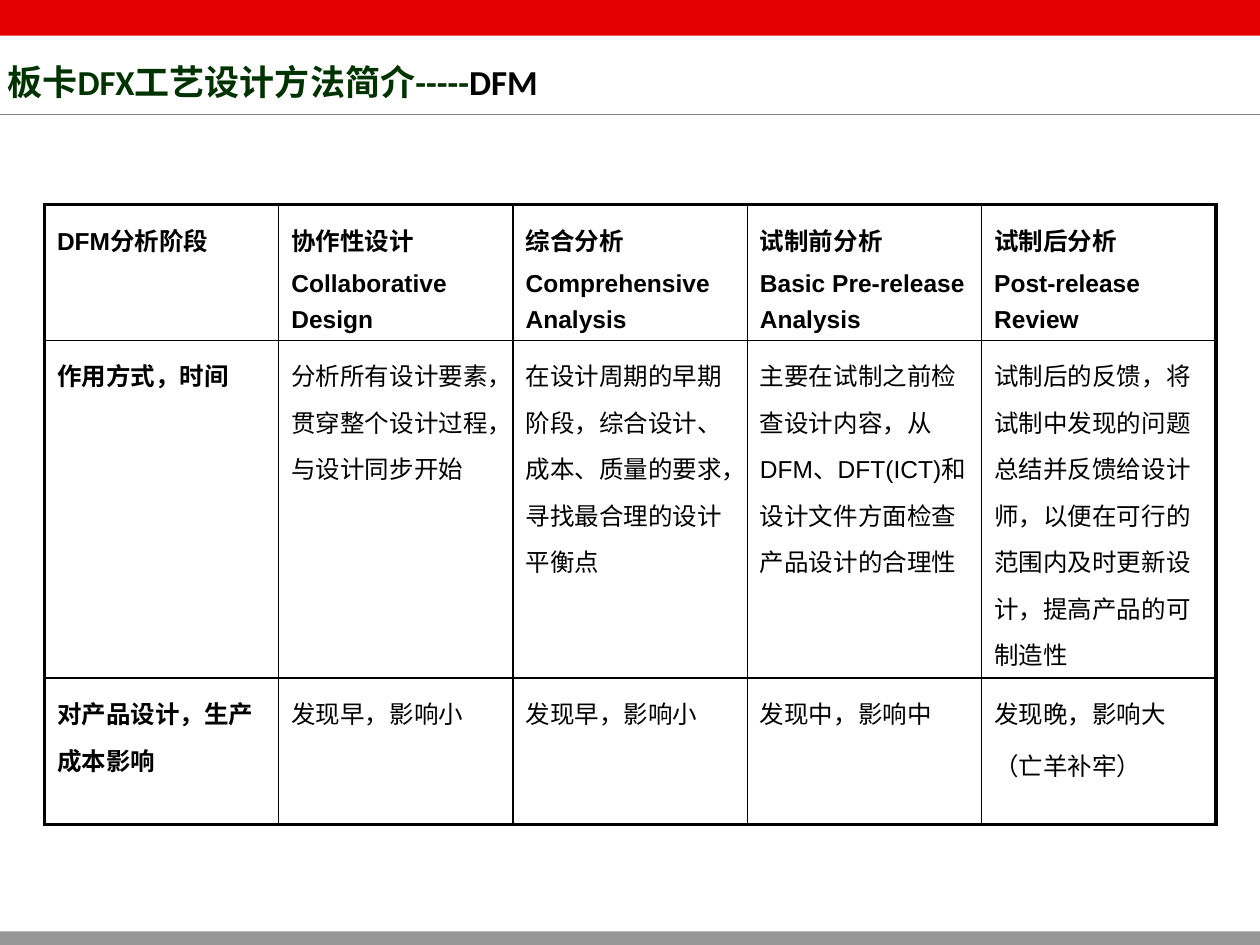
from lxml import etree
from pptx import Presentation
from pptx.dml.color import RGBColor
from pptx.enum import shapes, text
from pptx.oxml import ns
from pptx.util import Pt

COLORS = {"red": "E50000", "grey": "969696", "rule": "808080",
          "green": "003300", "black": "000000"}
SLIDE_W, SLIDE_H = 720, 540
THIN, THICK = 1, 2.25
COLUMN_W = 133.9
ROW_HEIGHTS = [77.1, 193.1, 83.5]
STAGES = [
    ["DFM分析阶段", "协作性设计\nCollaborative Design",
     "综合分析\nComprehensive Analysis",
     "试制前分析\nBasic Pre-release Analysis",
     "试制后分析\nPost-release Review"],
    ["作用方式，时间",
     "分析所有设计要素，贯穿整个设计过程，与设计同步开始",
     "在设计周期的早期阶段，综合设计、成本、质量的要求，寻找最合理的设计平衡点",
     "主要在试制之前检查设计内容，从DFM、DFT(ICT)和设计文件方面检查产品设计的合理性",
     "试制后的反馈，将试制中发现的问题总结并反馈给设计师，以便在可行的范围内及时更新设计，提高产品的可制造性"],
    ["对产品设计，生产成本影响", "发现早，影响小", "发现早，影响小",
     "发现中，影响中", "发现晚，影响大\n（亡羊补牢）"],
]


def rgb(name):
    return RGBColor.from_string(COLORS[name])


def style_font(font, face, size, color, bold):
    font.name, font.size, font.bold = face, Pt(size), bold
    font.color.rgb = rgb(color)


def add_band(slide, top, height, color):
    band = slide.shapes.add_shape(shapes.MSO_SHAPE.RECTANGLE, 0, Pt(top),
                                  Pt(SLIDE_W), Pt(height))
    band.shadow.inherit = False
    band.fill.solid()
    band.fill.fore_color.rgb = rgb(color)
    band.line.fill.background()


def add_rule(slide, y):
    rule = slide.shapes.add_connector(shapes.MSO_CONNECTOR.STRAIGHT,
                                      Pt(SLIDE_W), Pt(y), 0, Pt(y))
    rule.line.color.rgb = rgb("rule")
    rule.line.width = Pt(0.75)
    etree.SubElement(rule._element.spPr, ns.qn("a:effectLst"))


def fill_title(title):
    title.left, title.top, title.width, title.height = Pt(-2.9), Pt(15.1), Pt(607), Pt(62.6)
    title.text_frame.vertical_anchor = text.MSO_ANCHOR.MIDDLE
    heading = title.text_frame.paragraphs[0]
    heading.alignment = text.PP_ALIGN.LEFT
    for words, color in [("板卡DFX工艺设计方法简介-----", "green"), ("DFM", "black")]:
        run = heading.add_run()
        run.text = words
        style_font(run.font, "Calibri", 20, color, True)


def set_borders(cell, widths):
    """Draw black borders; widths maps the sides L, R, T, B to points."""
    properties = cell._tc.get_or_add_tcPr()
    for side in "LRTB":
        border = etree.SubElement(properties, ns.qn(f"a:ln{side}"),
                                  w=str(Pt(widths[side])))
        fill = etree.SubElement(border, ns.qn("a:solidFill"))
        etree.SubElement(fill, ns.qn("a:srgbClr"), val=COLORS["black"])


def fill_cell(cell, words, bold):
    cell.text_frame.text = words
    for paragraph in cell.text_frame.paragraphs:
        paragraph.line_spacing = 1.3
        paragraph.space_before = Pt(2.8)
        for run in paragraph.runs:
            style_font(run.font, "Arial", 14, "black", bold)


def add_stage_table(slide):
    last_row, last_column = len(STAGES) - 1, len(STAGES[0]) - 1
    table = slide.shapes.add_table(
        last_row + 1, last_column + 1, Pt(25.4), Pt(117),
        Pt(COLUMN_W * (last_column + 1)), Pt(sum(ROW_HEIGHTS))).table
    table.first_row = table.horz_banding = False
    for column in table.columns:
        column.width = Pt(COLUMN_W)
    for r, (height, stage_row) in enumerate(zip(ROW_HEIGHTS, STAGES)):
        table.rows[r].height = Pt(height)
        for c, words in enumerate(stage_row):
            cell = table.cell(r, c)
            fill_cell(cell, words, bold=r == 0 or c == 0)
            outer = {"L": c == 0, "R": c == last_column,
                     "T": r == 0, "B": r == last_row}
            set_borders(cell, {side: THICK if edge else THIN
                               for side, edge in outer.items()})
            cell.fill.background()


def main():
    deck = Presentation()
    deck.slide_width, deck.slide_height = Pt(SLIDE_W), Pt(SLIDE_H)
    slide = deck.slides.add_slide(deck.slide_layouts.get_by_name("Title Only"))
    add_band(slide, 0, 20.4, "red")
    add_rule(slide, 65.6)
    add_band(slide, 532.2, 7.8, "grey")
    fill_title(slide.shapes.title)
    add_stage_table(slide)
    deck.save("out.pptx")


if __name__ == "__main__":
    main()
